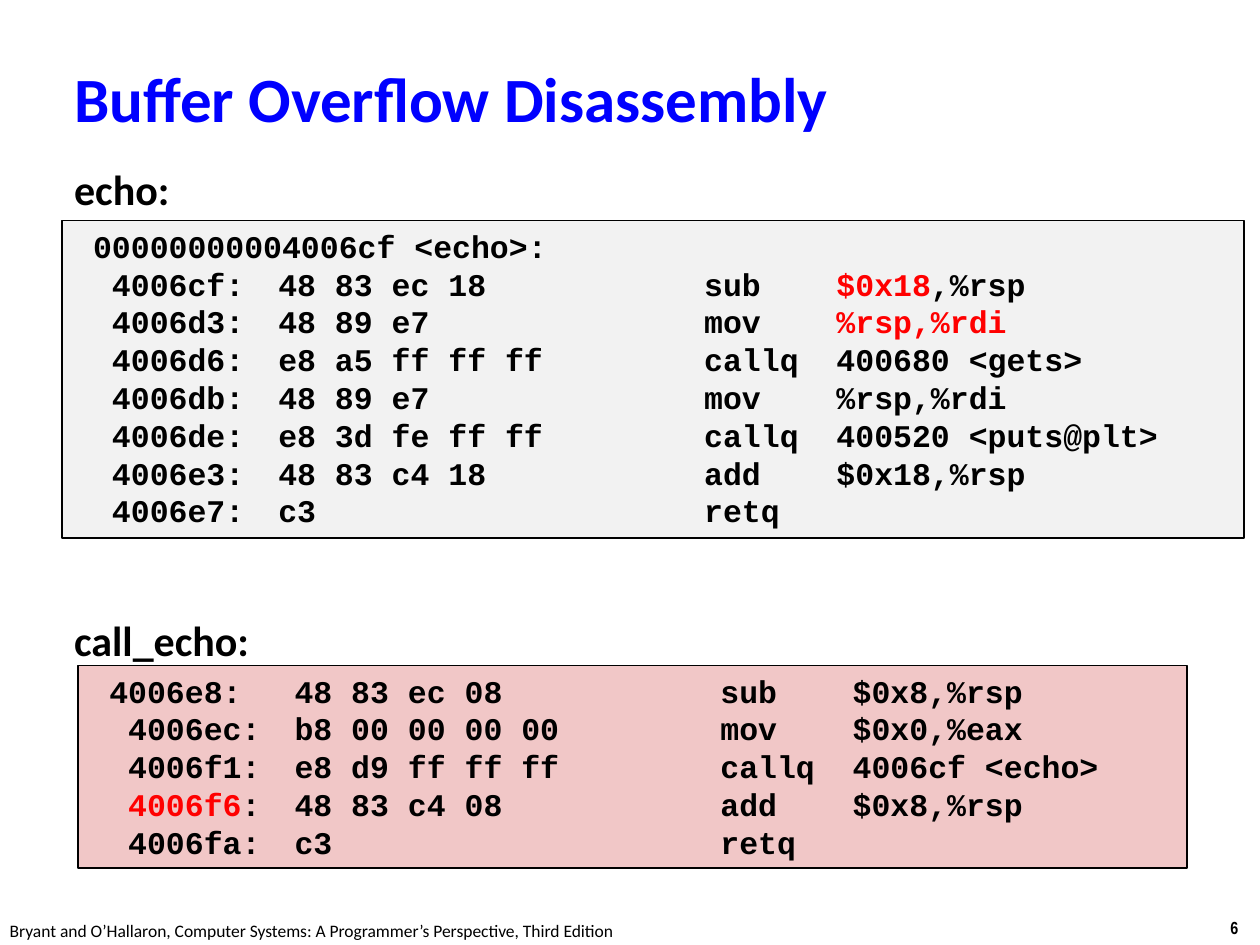
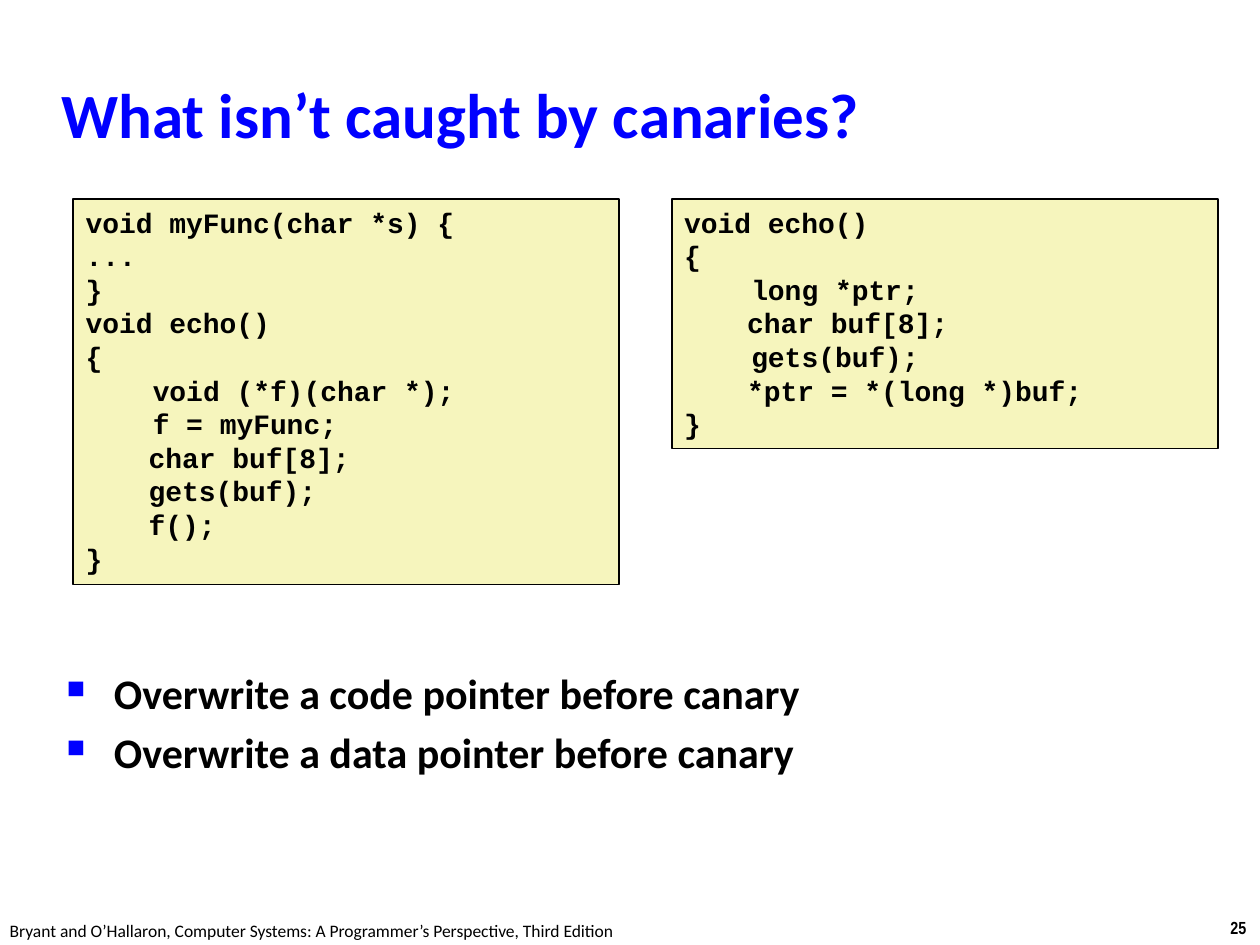
from lxml import etree
from pptx import Presentation
from pptx.dml.color import RGBColor
from pptx.enum.shapes import MSO_SHAPE
from pptx.enum.text import MSO_ANCHOR, MSO_AUTO_SIZE, PP_ALIGN
from pptx.oxml.ns import qn
from pptx.util import Pt

RECT = MSO_SHAPE.RECTANGLE
TOP, MIDDLE = MSO_ANCHOR.TOP, MSO_ANCHOR.MIDDLE
GROW, FIXED = MSO_AUTO_SIZE.SHAPE_TO_FIT_TEXT, MSO_AUTO_SIZE.NONE
LEFT = PP_ALIGN.LEFT

BLACK, BLUE, RED = "000000", "0000FF", "FF0000"
GRAY, PINK, CREAM = "F2F2F2", "F1C7C7", "F6F5BD"

TITLE = {"name": "Calibri", "size": Pt(36), "bold": True}
BODY = {"name": "Calibri", "size": Pt(24), "bold": True}
ASM = {"name": "Courier New", "size": Pt(18), "bold": True}
CODE = {"name": "Courier New", "size": Pt(16), "bold": True}
FOOT = {"name": "Calibri", "size": Pt(10), "bold": False}
PAGE = {"name": "Arial Narrow", "size": Pt(10), "bold": True}

ASM_TABS = [10.8, 21.6, 116.64, 360, 435.6]
CODE_TABS = [36, 38.4]
CODE_TOP, CODE_WIDTH = 113.75, 312
CREDIT = "Bryant and O’Hallaron, Computer Systems: A Programmer’s Perspective, Third Edition"

ECHO = [
    "\t00000000004006cf <echo>:",
    "\t\t4006cf:\t48 83 ec 18\tsub\t|$0x18|,%rsp",
    "\t\t4006d3:\t48 89 e7\tmov\t|%rsp,%rdi|",
    "\t\t4006d6:\te8 a5 ff ff ff\tcallq\t400680 <gets>",
    "\t\t4006db:\t48 89 e7\tmov\t%rsp,%rdi",
    "\t\t4006de:\te8 3d fe ff ff\tcallq\t400520 <puts@plt>",
    "\t\t4006e3:\t48 83 c4 18\tadd\t$0x18,%rsp",
    "\t\t4006e7:\tc3\tretq",
]
CALLER = [
    "\t4006e8:\t48 83 ec 08\tsub\t$0x8,%rsp",
    "\t\t4006ec:\tb8 00 00 00 00\tmov\t$0x0,%eax",
    "\t\t4006f1:\te8 d9 ff ff ff\tcallq\t4006cf <echo>",
    "\t\t|4006f6|:\t48 83 c4 08\tadd\t$0x8,%rsp",
    "\t\t4006fa:\tc3\tretq",
]
FUNC_PTR = [
    "void myFunc(char *s) {",
    "...",
    "}",
    "void echo()",
    "{",
    "\t\tvoid (*f)(char *);",
    "\t\tf = myFunc;",
    "\tchar buf[8];",
    "\tgets(buf);",
    "\tf();",
    "}",
]
DATA_PTR = [
    "void echo()",
    "{",
    "\t\tlong *ptr;",
    "\tchar buf[8];",
    "\t\tgets(buf);",
    "\t*ptr = *(long *)buf;",
    "}",
]


def color(value):
    return RGBColor.from_string(value)


def add_run(para, text, style, tint=BLACK):
    run = para.add_run()
    run.text = text
    for key, value in style.items():
        setattr(run.font, key, value)
    run.font.color.rgb = color(tint)


def set_frame(frame, **values):
    for key, value in values.items():
        setattr(frame, key, value)


def add_lines(frame, lines, style):
    for index, line in enumerate(lines):
        para = frame.add_paragraph() if index else frame.paragraphs[0]
        para.alignment = LEFT
        for order, part in enumerate(line.split("|")):
            if part:
                add_run(para, part, style, RED if order % 2 else BLACK)


def add_tabs(para, stops):
    tabs = etree.SubElement(para._p.get_or_add_pPr(), qn("a:tabLst"))
    for stop in stops:
        etree.SubElement(tabs, qn("a:tab"), pos=str(Pt(stop)), algn="l")


def add_bullet(para):
    props = para._p.get_or_add_pPr()
    props.set("marL", str(Pt(27)))
    props.set("indent", str(Pt(-27)))
    tint = etree.SubElement(props, qn("a:buClr"))
    etree.SubElement(tint, qn("a:srgbClr"), val=BLUE)
    etree.SubElement(props, qn("a:buSzPct"), val="60000")
    etree.SubElement(props, qn("a:buChar"), char="■")


def add_label(slide, text, box, style):
    label = slide.shapes.add_textbox(*map(Pt, box))
    set_frame(label.text_frame, word_wrap=False, auto_size=GROW)
    add_lines(label.text_frame, [text], style)


def add_code(slide, lines, box, fill, style, stops):
    panel = slide.shapes.add_shape(RECT, *map(Pt, box))
    panel.shadow.inherit = False
    panel.fill.solid()
    panel.fill.fore_color.rgb = color(fill)
    panel.line.color.rgb = color(BLACK)
    panel.line.width = Pt(1)
    frame = panel.text_frame
    set_frame(frame, word_wrap=True, auto_size=GROW, vertical_anchor=TOP)
    add_lines(frame, lines, style)
    for para in frame.paragraphs:
        add_tabs(para, stops)


def add_points(slide, lines, box):
    frame = slide.shapes.add_textbox(*map(Pt, box)).text_frame
    set_frame(frame, word_wrap=True, auto_size=FIXED)
    add_lines(frame, lines, BODY)
    for para in frame.paragraphs:
        para.space_before = Pt(4.8)
        add_bullet(para)


def add_page(deck, text, box, number):
    slide = deck.slides.add_slide(deck.slide_layouts[5])
    title = slide.shapes.title
    title.left, title.top, title.width, title.height = map(Pt, box)
    frame = title.text_frame
    set_frame(frame, word_wrap=True, auto_size=FIXED, vertical_anchor=MIDDLE)
    frame.paragraphs[0].alignment = LEFT
    add_run(frame.paragraphs[0], text, TITLE, BLUE)
    add_label(slide, number, (696, 520.5, 24.5, 19.5), PAGE)
    add_label(slide, CREDIT, (-1.5, 522, 366, 19.5), FOOT)
    return slide


def main():
    deck = Presentation()
    deck.slide_width, deck.slide_height = Pt(720), Pt(540)

    slide = add_page(deck, "Buffer Overflow Disassembly", (35.3, 33, 558.7, 45.4), "6")
    add_code(slide, ECHO, (35.3, 126, 675.4, 181.4), GRAY, ASM, ASM_TABS)
    add_code(slide, CALLER, (44.6, 380.2, 633.6, 115.9), PINK, ASM, ASM_TABS)
    add_label(slide, "call_echo:", (35.3, 347.8, 115.9, 36), BODY)
    add_label(slide, "echo:", (35.3, 90, 69.8, 36), BODY)

    slide = add_page(deck, "What isn’t caught by canaries?", (28, 34.6, 597.6, 59.8), "25")
    points = [f"Overwrite a {kind} pointer before canary" for kind in ("code", "data")]
    add_points(slide, points, (31, 378, 622, 121))
    for lines, left, height in ((FUNC_PTR, 41.8, 220.3), (DATA_PTR, 383.8, 142.6)):
        add_code(slide, lines, (left, CODE_TOP, CODE_WIDTH, height), CREAM, CODE, CODE_TABS)

    deck.save("out.pptx")


if __name__ == "__main__":
    main()
